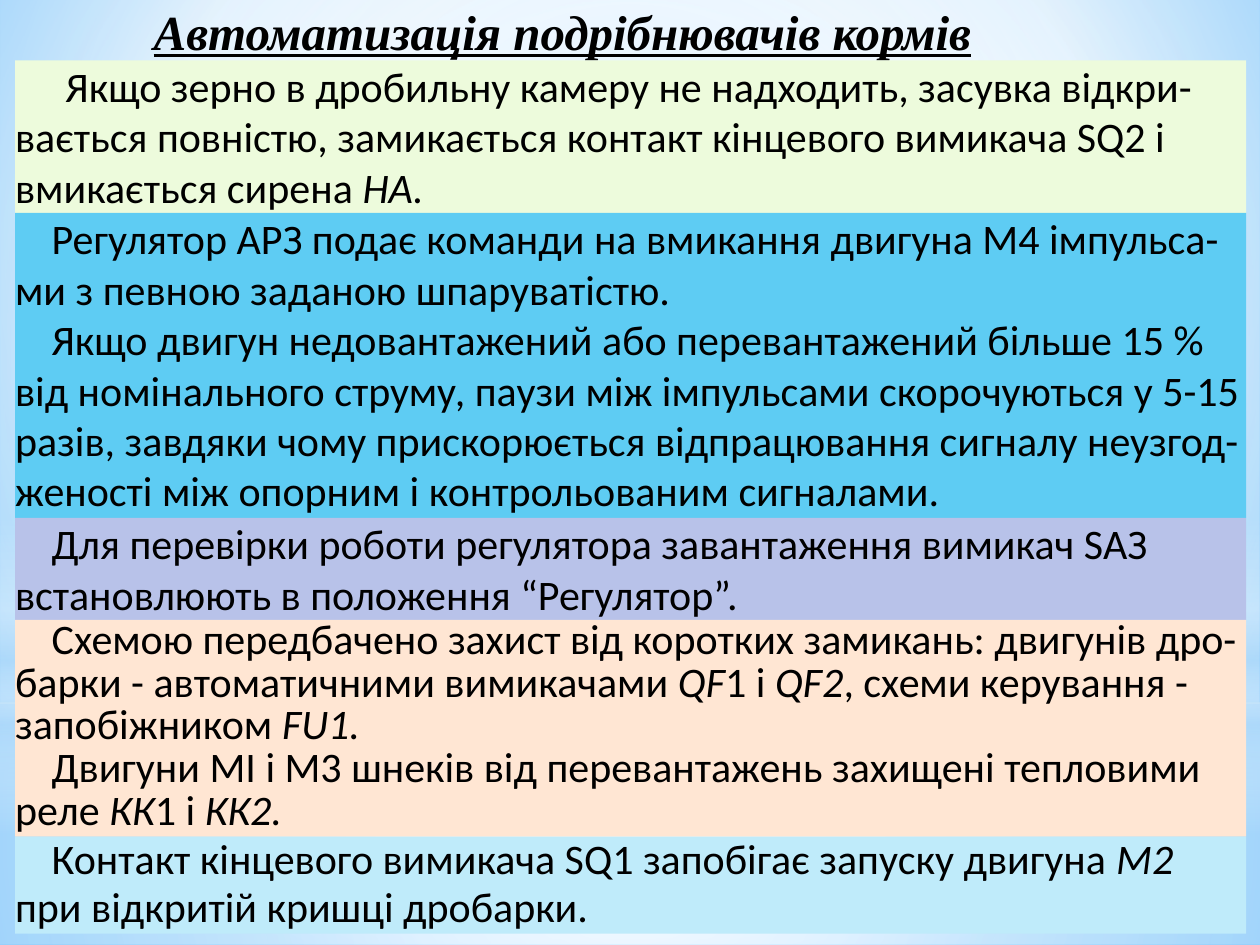
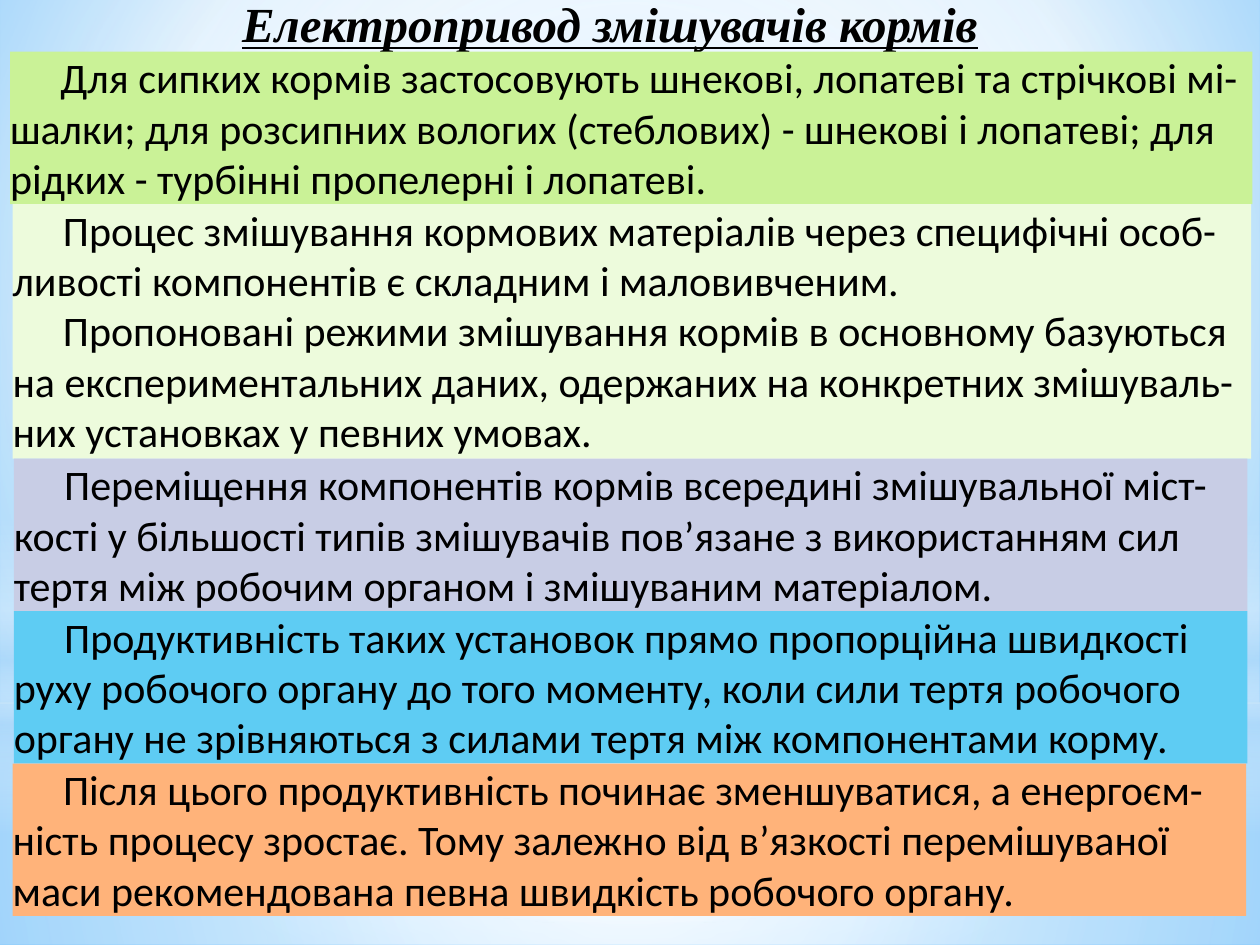
from lxml import etree
from pptx import Presentation
from pptx.dml.color import RGBColor
from pptx.enum.shapes import MSO_SHAPE
from pptx.enum.text import MSO_ANCHOR, MSO_AUTO_SIZE, PP_ALIGN
from pptx.oxml.ns import qn
from pptx.util import Inches, Pt

RECT, OVAL = MSO_SHAPE.RECTANGLE, MSO_SHAPE.OVAL
LEFT, CENTER = PP_ALIGN.LEFT, PP_ALIGN.CENTER
TOP, GROW = MSO_ANCHOR.TOP, MSO_AUTO_SIZE.SHAPE_TO_FIT_TEXT
A_NS = "http://schemas.openxmlformats.org/drawingml/2006/main"

BLACK = RGBColor(0x00, 0x00, 0x00)
WHITE = RGBColor(0xFF, 0xFF, 0xFF)
MIST = RGBColor(0xB4, 0xDC, 0xFA)
PALE_BLUE = RGBColor(0x9E, 0xD5, 0xFF)
DEEP_BLUE = RGBColor(0x5B, 0xB9, 0xFF)
PALE_GREEN = RGBColor(0xED, 0xFB, 0xDC)
GREEN = RGBColor(0xCA, 0xF2, 0x97)
SKY = RGBColor(0x5E, 0xCC, 0xF3)
PALE_SKY = RGBColor(0xBF, 0xEB, 0xFA)
LAVENDER = RGBColor(0xB8, 0xC2, 0xE9)
GREY_LILAC = RGBColor(0xC8, 0xCD, 0xE5)
PEACH = RGBColor(0xFF, 0xE6, 0xD3)
ORANGE = RGBColor(0xFF, 0xB3, 0x7A)

TITLE_FONT = {"name": "Times New Roman", "size": Pt(28), "bold": True,
              "italic": True, "underline": True}
BODY_FONT = {"name": "Calibri", "size": Pt(24)}
FRAME = {"margin_left": 0, "margin_top": 0, "margin_right": 0, "margin_bottom": 0,
         "vertical_anchor": TOP, "auto_size": GROW}

MIDDLE = (50, 50, 50, 50)
BACKGROUND = [(0, PALE_BLUE, 100), (60, WHITE, 100), (100, DEEP_BLUE, 100)]
OVERLAYS = [
    (RECT, (0, 5.58, 10, 1.92), [(0, WHITE, 91), (37, WHITE, 76), (100, MIST, 79)], MIDDLE),
    (RECT, (0, 0, 10, 5.58), [(0, WHITE, 89), (48, WHITE, 62), (100, MIST, 79)], MIDDLE),
    (RECT, (0, 4.12, 10, 2.5), [(0, WHITE, 0), (29, WHITE, 30), (45, MIST, 40),
                                (55, WHITE, 26), (65, MIST, 60), (100, WHITE, 0)], None),
    (OVAL, (0, 1.75, 10, 5.58), [(0, WHITE, 100), (56, WHITE, 0)], MIDDLE),
]

CRUSHER_BANDS = [
    dict(left=0.12, width=9.77, height=1.21, color=PALE_GREEN, indent=0.4, paragraphs=[
        "Якщо зерно в дробильну камеру не надходить, засувка відкри-вається повністю, "
        "замикається контакт кінцевого вимикача SQ2 і вмикається сирена *НА.*"]),
    dict(left=0.12, width=9.77, height=2.42, color=SKY, indent=0.29, paragraphs=[
        "Регулятор АРЗ подає команди на вмикання двигуна М4 імпульса-ми з певною "
        "заданою шпаруватістю.",
        "Якщо двигун недовантажений або перевантажений більше 15 % від номінального "
        "струму, паузи між імпульсами скорочуються у 5-15 разів, завдяки чому "
        "прискорюється відпрацювання сигналу неузгод-женості між опорним і "
        "контрольованим сигналами."]),
    dict(left=0.12, width=9.77, height=0.81, color=LAVENDER, indent=0.29, paragraphs=[
        "Для перевірки роботи регулятора завантаження вимикач SАЗ встановлюють "
        "в положення “Регулятор”."]),
    dict(left=0.12, width=9.77, height=1.72, color=PEACH, indent=0.29, spacing=0.85, paragraphs=[
        "Схемою передбачено захист від коротких замикань: двигунів дро-барки - "
        "автоматичними вимикачами *QF*1 і *QF2*, схеми керування - запобіжником *FU1.*",
        "Двигуни МІ і М3 шнеків від перевантажень захищені тепловими реле *КК*1 і *КК2.*"]),
    dict(left=0.12, width=9.77, height=0.77, color=PALE_SKY, indent=0.29, spacing=0.95, paragraphs=[
        "Контакт кінцевого вимикача SQ1 запобігає запуску двигуна *М2* при відкритій "
        "кришці дробарки."]),
]

MIXER_BANDS = [
    dict(left=0.08, width=9.86, height=1.21, color=GREEN, indent=0.4, paragraphs=[
        "Для сипких кормів застосовують шнекові, лопатеві та стрічкові мі-шалки; для "
        "розсипних вологих (стеблових) - шнекові і лопатеві; для рідких - турбінні "
        "пропелерні і лопатеві."]),
    dict(left=0.1, width=9.83, height=2.02, color=PALE_GREEN, indent=0.4, paragraphs=[
        "Процес змішування кормових матеріалів через специфічні особ-ливості "
        "компонентів є складним і маловивченим.",
        "Пропоновані режими змішування кормів в основному базуються на "
        "експериментальних даних, одержаних на конкретних змішуваль-них установках "
        "у певних умовах."]),
    dict(left=0.11, width=9.79, height=1.21, color=GREY_LILAC, indent=0.4, paragraphs=[
        "Переміщення компонентів кормів всередині змішувальної міст-кості у більшості "
        "типів змішувачів пов’язане з використанням сил тертя між робочим органом "
        "і змішуваним матеріалом."]),
    dict(left=0.11, width=9.79, height=1.21, color=SKY, indent=0.4, paragraphs=[
        "Продуктивність таких установок прямо пропорційна швидкості руху робочого "
        "органу до того моменту, коли сили тертя робочого органу не зрівняються "
        "з силами тертя між компонентами корму."]),
    dict(left=0.1, width=9.79, height=1.21, color=ORANGE, indent=0.4, paragraphs=[
        "Після цього продуктивність починає зменшуватися, а енергоєм-ність процесу "
        "зростає. Тому залежно від в’язкості перемішуваної маси рекомендована певна "
        "швидкість робочого органу."]),
]


def set_attrs(target, values):
    """Set each named value on the target."""
    for name, value in values.items():
        setattr(target, name, value)


def gradient(stops, focus):
    """Return a gradient fill element: circular around focus, or vertical without one."""
    gs = "".join(
        f'<a:gs pos="{pos * 1000}"><a:srgbClr val="{color}">'
        f'<a:alpha val="{alpha * 1000}"/></a:srgbClr></a:gs>' for pos, color, alpha in stops)
    if focus:
        l, t, r, b = (side * 1000 for side in focus)
        shade = f'<a:path path="circle"><a:fillToRect l="{l}" t="{t}" r="{r}" b="{b}"/></a:path>'
    else:
        shade = '<a:lin ang="5400000" scaled="0"/>'
    return etree.fromstring(
        f'<a:gradFill xmlns:a="{A_NS}" rotWithShape="1"><a:gsLst>{gs}</a:gsLst>{shade}</a:gradFill>')


def swap_fill(parent, fill):
    """Replace the solid fill of the parent element."""
    parent.replace(parent.find(qn("a:solidFill")), fill)


def add_plain_shape(s, kind, box, color):
    """Add a flat shape without line or shadow."""
    sp = s.shapes.add_shape(kind, *map(Inches, box))
    sp.shadow.inherit = False
    sp.fill.solid()
    sp.fill.fore_color.rgb = color
    sp.line.fill.background()
    return sp


def dress_master(prs, s):
    """Give the master its background and the soft overlays shared by all slides."""
    master = prs.slide_master
    master.background.fill.solid()
    swap_fill(master.element.find(".//" + qn("p:bgPr")), gradient(BACKGROUND, (20, 10, 20, 60)))
    for i, (kind, box, stops, focus) in enumerate(OVERLAYS):
        sp = add_plain_shape(s, kind, box, WHITE)
        swap_fill(sp.element.spPr, gradient(stops, focus))
        master.shapes.element.insert(2 + i, sp.element)


def add_text(p, text, font):
    """Fill a paragraph, with italics for the parts between asterisks."""
    for i, part in enumerate(text.split("*")):
        if part:
            r = p.add_run()
            r.text = part
            set_attrs(r.font, font)
            r.font.color.rgb = BLACK
            if i % 2:
                r.font.italic = True


def add_title(s, text, box, align, spacing):
    """Place and format the slide title."""
    sp = s.shapes.title
    set_attrs(sp, dict(zip(("left", "top", "width", "height"), map(Inches, box))))
    tf = sp.text_frame
    set_attrs(tf, {**FRAME, "word_wrap": align == CENTER})
    p = tf.paragraphs[0]
    set_attrs(p, {"alignment": align, "line_spacing": spacing})
    add_text(p, text, TITLE_FONT)


def add_band(s, top, left, width, height, color, indent, paragraphs, spacing=1.0):
    """Add one coloured band of text with first-line indents."""
    tf = add_plain_shape(s, RECT, (left, top, width, height), color).text_frame
    set_attrs(tf, {**FRAME, "word_wrap": True})
    for i, text in enumerate(paragraphs):
        p = tf.add_paragraph() if i else tf.paragraphs[0]
        set_attrs(p, {"alignment": LEFT, "line_spacing": spacing})
        pPr = p._p.get_or_add_pPr()
        pPr.set("marL", "0")
        pPr.set("indent", str(Inches(indent)))
        add_text(p, text, BODY_FONT)


def add_bands(s, top, bands):
    """Stack the bands downwards from the given top."""
    for band in bands:
        add_band(s, top, **band)
        top += band["height"]


def main():
    """Build both slides and save them."""
    prs = Presentation()
    prs.slide_width, prs.slide_height = Inches(10), Inches(7.5)
    layout = prs.slide_layouts[5]

    s = prs.slides.add_slide(layout)
    dress_master(prs, s)
    add_title(s, "Автоматизація подрібнювачів кормів", (1.22, 0.01, 6.56, 0.47), LEFT, 1.0)
    add_bands(s, 0.48, CRUSHER_BANDS)

    s = prs.slides.add_slide(layout)
    add_title(s, "Електропривод змішувачів кормів", (0.59, 0.02, 8.5, 0.4), CENTER, 0.85)
    add_bands(s, 0.41, MIXER_BANDS)

    prs.save("out.pptx")


if __name__ == "__main__":
    main()
